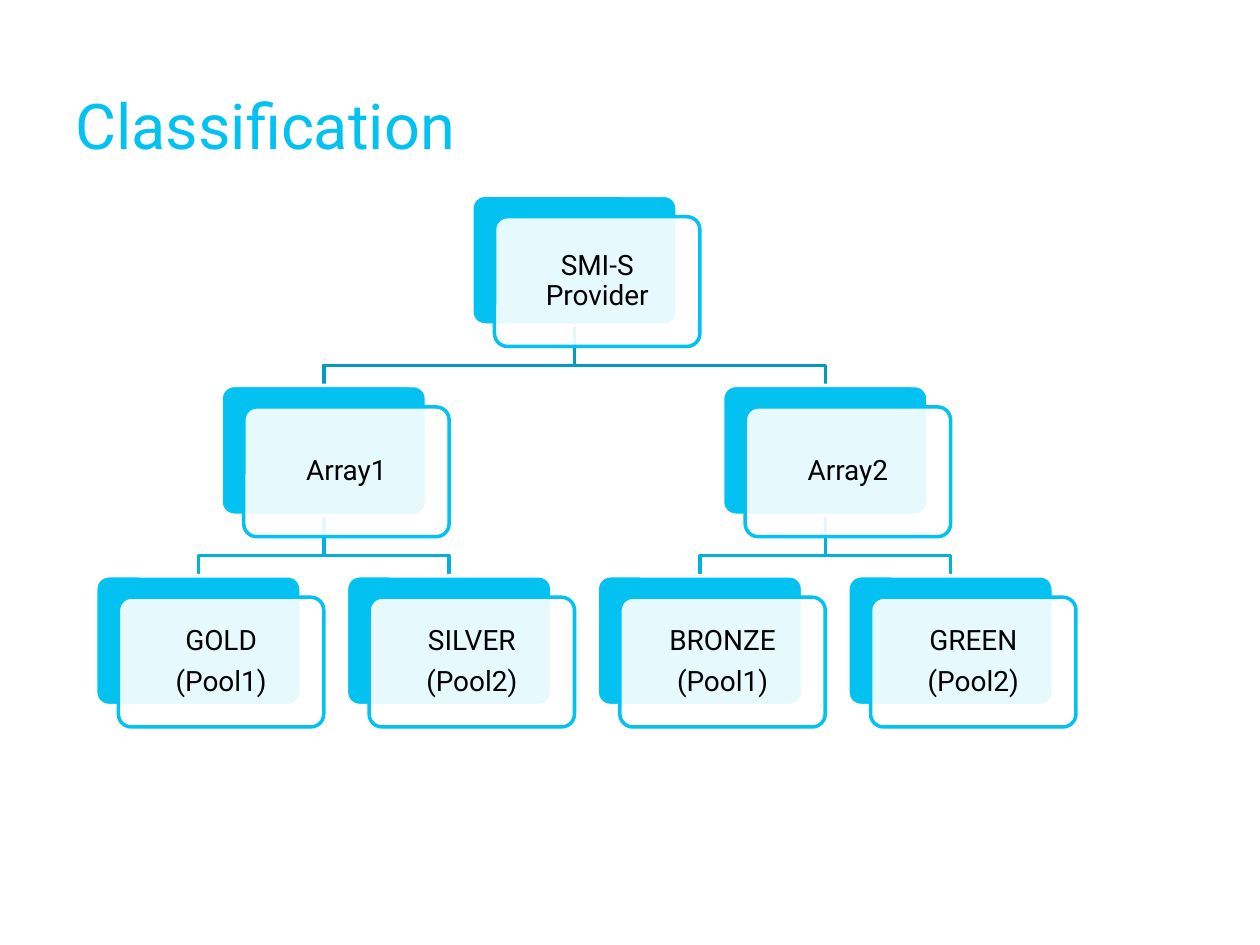
from dataclasses import dataclass, field

from lxml.etree import SubElement
from pptx import Presentation
from pptx.dml.color import RGBColor
from pptx.enum.shapes import MSO_SHAPE
from pptx.enum.text import MSO_ANCHOR, PP_ALIGN
from pptx.oxml.ns import qn
from pptx.util import Inches, Pt


@dataclass(frozen=True)
class Theme:
    font: str = "Roboto"
    accent: RGBColor = RGBColor(0x03, 0xC2, 0xF1)
    white: RGBColor = RGBColor(0xFF, 0xFF, 0xFF)
    black: RGBColor = RGBColor(0x00, 0x00, 0x00)
    link_colors: tuple = (RGBColor(0x02, 0x9B, 0xC1), RGBColor(0x03, 0xB0, 0xDB))
    title_size: Pt = Pt(36)
    label_size: Pt = Pt(16)
    label_gap: Pt = Pt(6)
    line_width: Pt = Pt(2)


@dataclass
class Node:
    lines: list
    children: list = field(default_factory=list)
    left: int = 0
    top: int = 0
    level: int = 0


THEME = Theme()
CARD_WIDTH, CARD_HEIGHT = Inches(1.63), Inches(1.03)
COLUMN_STEP, ROW_STEP = Inches(1.99), Inches(1.51)
FRONT_SHIFT_X, FRONT_SHIFT_Y = Inches(0.18), Inches(0.17)
STEM_HEIGHT = Inches(0.32)

HIERARCHY = Node(["SMI-S Provider"], [
    Node(["Array1"], [Node(["GOLD", "(Pool1)"]), Node(["SILVER", "(Pool2)"])]),
    Node(["Array2"], [Node(["BRONZE", "(Pool1)"]), Node(["GREEN", "(Pool2)"])]),
])


def apply_format(target, values):
    for name, value in values.items():
        setattr(target, name, value)


def write_lines(frame, lines, size, color, paragraph_format):
    for index, line in enumerate(lines):
        para = frame.paragraphs[0] if index == 0 else frame.add_paragraph()
        apply_format(para, paragraph_format)
        span = para.add_run()
        span.text = line
        apply_format(span.font, {"name": THEME.font, "size": size})
        span.font.color.rgb = color


def add_title(page, text, left, top, width, height):
    frame = page.shapes.add_textbox(left, top, width, height).text_frame
    apply_format(frame, {"word_wrap": True, "vertical_anchor": MSO_ANCHOR.MIDDLE})
    write_lines(frame, [text], THEME.title_size, THEME.accent, {"alignment": PP_ALIGN.LEFT})


def arrange(node, left, top, level=0):
    """Place leaves in columns and centre parents above them; return the next free left."""
    node.top, node.level = top, level
    if not node.children:
        node.left = left
        return left + COLUMN_STEP
    for child in node.children:
        left = arrange(child, left, top + ROW_STEP, level + 1)
    node.left = (node.children[0].left + node.children[-1].left) // 2
    return left


def walk(node):
    yield node
    for child in node.children:
        yield from walk(child)


def add_link(page, parent, child):
    start_x, end_x = (node.left + CARD_WIDTH // 2 for node in (parent, child))
    start_y = parent.top + CARD_HEIGHT
    bend_y = start_y + STEM_HEIGHT
    builder = page.shapes.build_freeform(start_x, start_y)
    builder.add_line_segments(
        [(start_x, bend_y), (end_x, bend_y), (end_x, child.top)], close=False)
    link = builder.convert_to_shape()
    link.shadow.inherit = False
    link.fill.background()
    link.line.color.rgb = THEME.link_colors[parent.level]
    link.line.width = THEME.line_width


def add_panel(page, left, top, fill, outline):
    panel = page.shapes.add_shape(
        MSO_SHAPE.ROUNDED_RECTANGLE, left, top, CARD_WIDTH, CARD_HEIGHT)
    panel.adjustments[0] = 0.1
    panel.shadow.inherit = False
    panel.fill.solid()
    panel.fill.fore_color.rgb = fill
    panel.line.color.rgb = outline
    panel.line.width = THEME.line_width
    return panel


def add_card(page, node):
    """Draw a solid panel with a translucent labelled panel shifted over it."""
    add_panel(page, node.left, node.top, THEME.accent, THEME.white)
    front = add_panel(page, node.left + FRONT_SHIFT_X, node.top + FRONT_SHIFT_Y,
                      THEME.white, THEME.accent)
    fill_color = front.fill._xPr.find(qn("a:solidFill"))[0]
    SubElement(fill_color, qn("a:alpha"), val="90000")

    frame = front.text_frame
    margins = {f"margin_{side}": Inches(0.07) for side in ("left", "top", "right", "bottom")}
    apply_format(frame, {"word_wrap": True, "vertical_anchor": MSO_ANCHOR.MIDDLE, **margins})
    write_lines(frame, node.lines, THEME.label_size, THEME.black, {
        "alignment": PP_ALIGN.CENTER,
        "line_spacing": 0.9,
        "space_after": THEME.label_gap,
    })


def add_hierarchy(page, root, left, top):
    arrange(root, left, top)
    nodes = list(walk(root))
    for parent in nodes:
        for child in parent.children:
            add_link(page, parent, child)
    for node in nodes:
        add_card(page, node)


def main():
    deck = Presentation()
    deck.slide_width, deck.slide_height = Inches(10), Inches(7.5)
    page = deck.slides.add_slide(deck.slide_layouts[6])
    add_title(page, "Classification", Inches(0.5), Inches(0.36), Inches(9), Inches(1.25))
    add_hierarchy(page, HIERARCHY, Inches(0.76), Inches(1.55))
    deck.save("out.pptx")


if __name__ == "__main__":
    main()
